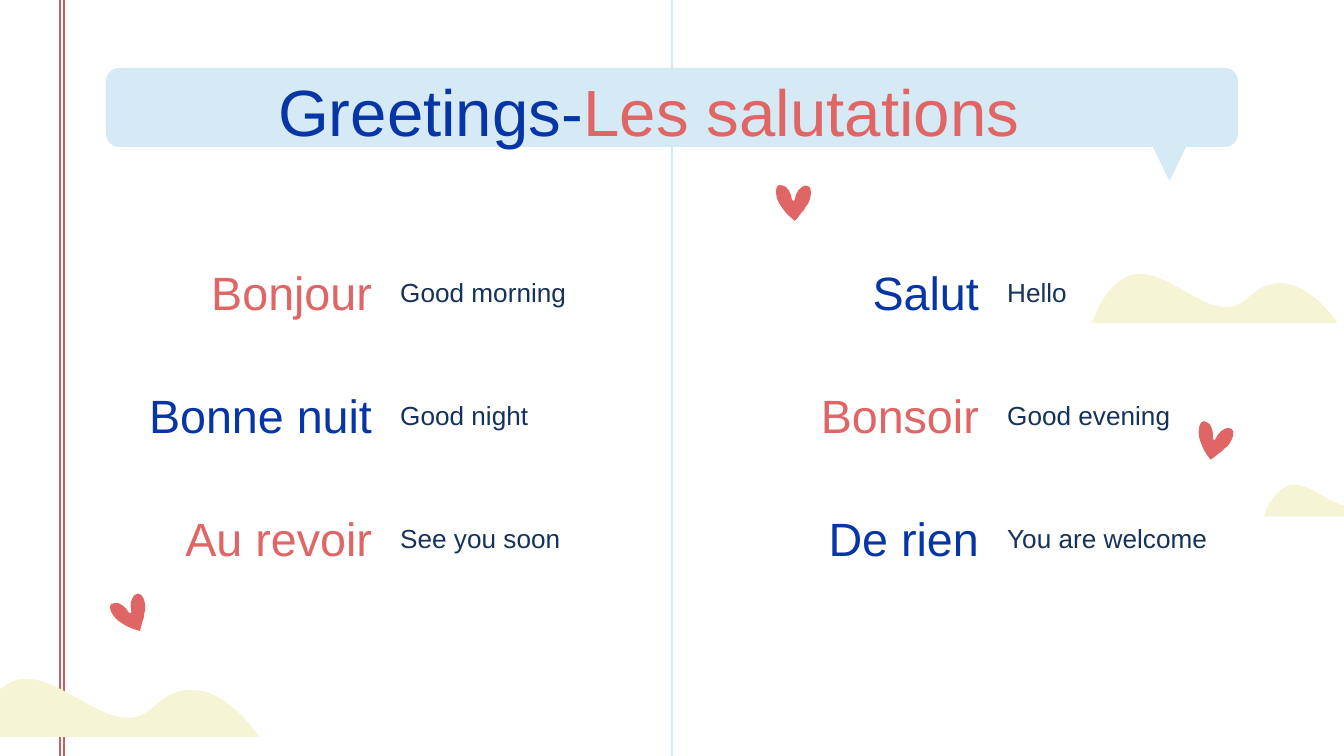
from pptx import Presentation
from pptx.dml.color import RGBColor
from pptx.enum.shapes import MSO_CONNECTOR, MSO_SHAPE
from pptx.enum.text import MSO_ANCHOR, MSO_AUTO_SIZE, PP_ALIGN
from pptx.oxml.ns import qn
from pptx.util import Pt
from lxml import etree

PX = 914400 / 134.4
SKY = RGBColor(0xD6, 0xEA, 0xF6)
RULE = RGBColor(0xCA, 0x5E, 0x5E)
SAND = RGBColor(0xF5, 0xF4, 0xD5)
RED = RGBColor(0xE0, 0x66, 0x66)
BLUE = RGBColor(0x06, 0x35, 0xA5)
NAVY = RGBColor(0x15, 0x32, 0x5B)
LINE = MSO_CONNECTOR.STRAIGHT
ROUND = MSO_SHAPE.ROUNDED_RECTANGLE
POINT = MSO_SHAPE.ISOSCELES_TRIANGLE
MID = MSO_ANCHOR.MIDDLE
LEFT, RIGHT, CENTER = PP_ALIGN.LEFT, PP_ALIGN.RIGHT, PP_ALIGN.CENTER

# Outlines in px: a start point, then Bezier rows of two controls and an end
HILL = [
    (58, 0),
    (52, 0), (47, 0), (42, 3),
    (13, 15), (0, 58), (0, 58),
    (0, 58), (289, 58), (289, 58),
    (289, 58), (259, 11), (222, 11),
    (221, 11), (220, 11), (219, 11),
    (188, 13), (183, 39), (159, 39),
    (153, 39), (146, 38), (138, 35),
    (102, 19), (81, 0), (58, 0)]
HEART = [
    (19, 36),
    (17, 34), (15, 33), (13, 31),
    (9, 27), (6, 23), (3, 18),
    (1, 14), (0, 10), (0, 6),
    (0, 3), (1, 1), (3, 0),
    (6, 0), (8, 1), (10, 2),
    (12, 4), (14, 7), (15, 10),
    (15, 12), (16, 13), (16, 15),
    (16, 15), (17, 16), (18, 16),
    (18, 16), (19, 15), (19, 14),
    (19, 13), (20, 11), (20, 10),
    (21, 7), (23, 4), (26, 2),
    (28, 1), (30, 0), (32, 1),
    (34, 2), (35, 4), (35, 7),
    (35, 11), (34, 15), (32, 19),
    (30, 21), (29, 23), (28, 25),
    (25, 28), (22, 33), (19, 36)]


def px(*nums):
    return [round(n * PX) for n in nums]


def draw(outline, left, top, size, color):
    """Build a freeform whose vertices, three by three, become Bezier curves."""
    dots = [px(left + x * size, top + y * size) for x, y in outline]
    pen = shapes.build_freeform(*dots[0], scale=1.0)
    pen.add_line_segments(dots[1:], close=True)
    shape = pen.convert_to_shape()
    legs = list(shape.element.iter(qn("a:lnTo")))
    for i in range(0, len(legs), 3):
        curve = etree.Element(qn("a:cubicBezTo"))
        legs[i].addprevious(curve)
        for leg in legs[i:i + 3]:
            curve.append(leg[0])
            leg.getparent().remove(leg)
    shape.shadow.inherit = False
    shape.fill.solid()
    shape.fill.fore_color.rgb = color
    shape.line.fill.background()
    return shape


deck = Presentation()
deck.slide_width, deck.slide_height = px(1344, 756)
slide = deck.slides.add_slide(deck.slide_layouts[5])
shapes = slide.shapes

# Page rules
for x, color in ((672, SKY), (60, RULE), (64, RULE)):
    rule = shapes.add_connector(LINE, *px(x, 0, x, 756))
    rule.line.color.rgb = color
    rule.line.width = Pt(0.75)
    etree.SubElement(rule.element.spPr, qn("a:effectLst"))

# Speech bubble
for kind, box, turn in ((ROUND, (106, 68, 1132, 79), 0),
                        (POINT, (1148, 137, 43, 44), 180)):
    part = shapes.add_shape(kind, *px(*box))
    part.rotation = turn
    part.shadow.inherit = False
    part.fill.solid()
    part.fill.fore_color.rgb = SKY
    part.line.fill.background()

# Hills and hearts
for x, y, size in ((1264, 485, 0.54), (1092, 274, 0.85), (-30, 679, 1)):
    draw(HILL, x, y, size, SAND)
for x, y, turn in ((776, 185, 0), (1196, 424, 14), (114, 597, -22.8)):
    draw(HEART, x, y, 1, RED).rotation = turn

# Title, brought in front of the bubble
title = shapes.title
shapes.element.append(title.element)
title.left, title.top, title.width, title.height = px(83, 68, 1132, 85)
frame = title.text_frame
frame.word_wrap = True
frame.auto_size = MSO_AUTO_SIZE.NONE
frame.vertical_anchor = MID
para = frame.paragraphs[0]
para.alignment = CENTER
for text, color in (("Greetings-", BLUE), ("Les salutations", RED)):
    run = para.add_run()
    run.text = text
    run.font.name = "Arial"
    run.font.size = Pt(35)
    run.font.color.rgb = color

# Phrases: French on the left of each column, English beside it
words = [
    [("Bonjour", "Good morning"), ("Bonne nuit", "Good night"),
     ("Au revoir", "See you soon")],
    [("Salut", "Hello"), ("Bonsoir", "Good evening"),
     ("De rien", "You are welcome")]]
for col, group in enumerate(words):
    for row, (french, english) in enumerate(group):
        tint = BLUE if (row + col) % 2 else RED
        for text, x, width, size, color, side in (
                (french, 123, 262, 25, tint, RIGHT),
                (english, 387, 227, 14, NAVY, LEFT)):
            box = shapes.add_textbox(
                *px(x + 607 * col, 263 + 123 * row, width, 58))
            frame = box.text_frame
            frame.word_wrap = True
            frame.vertical_anchor = MID
            para = frame.paragraphs[0]
            para.text = text
            para.alignment = side
            font = para.runs[0].font
            font.name = "Arial"
            font.size = Pt(size)
            font.color.rgb = color

deck.save("out.pptx")
